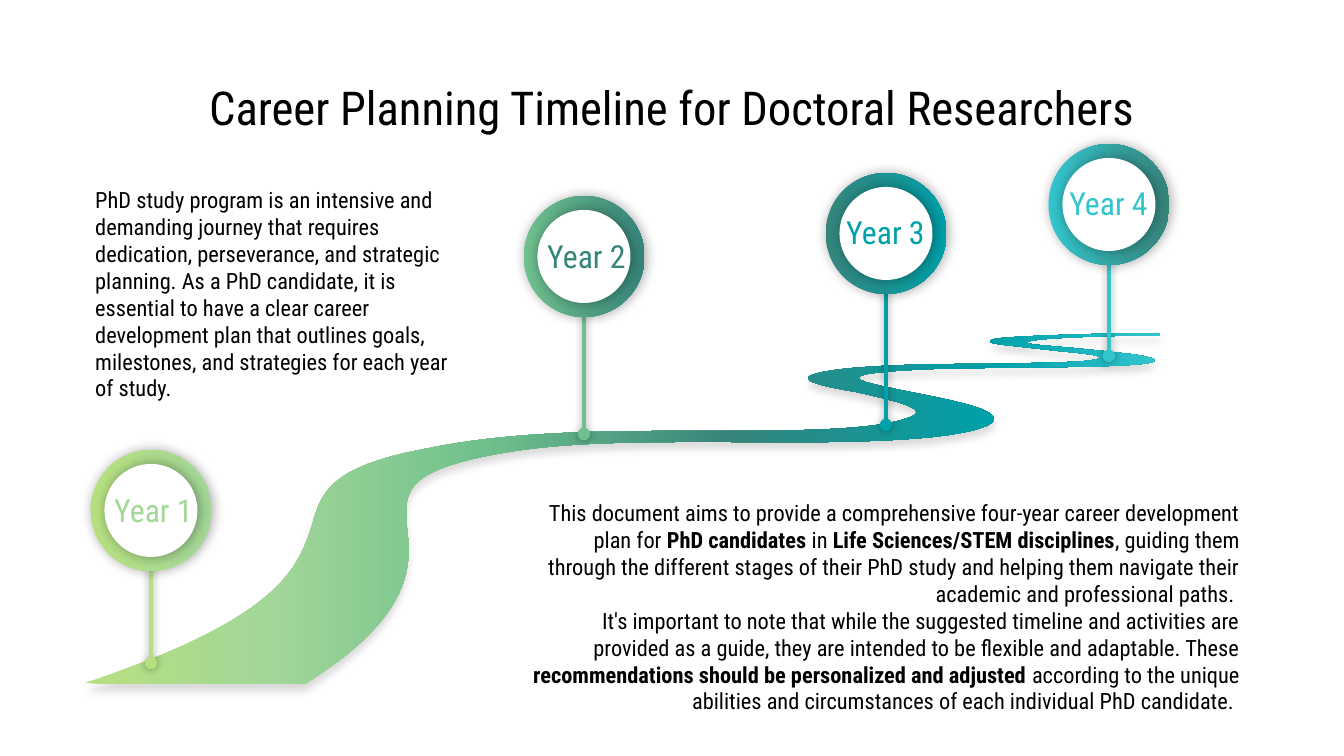
"""Build a slide with a winding four-year career road and its milestones."""
from copy import deepcopy
from pptx import Presentation
from pptx.dml.color import RGBColor
from pptx.enum.shapes import MSO_CONNECTOR as Line, MSO_SHAPE as Form
from pptx.enum.text import MSO_ANCHOR as Anchor, PP_ALIGN as Align
from pptx.oxml import parse_xml
from pptx.oxml.ns import nsdecls
from pptx.util import Pt

PX = 914400 / 134.4
FONT = "Roboto Condensed"
rgb = RGBColor.from_string


def shade(shape, alpha, blur, dist=0, angle=0):
    shape._element.spPr.append(parse_xml(
        f'<a:effectLst {nsdecls("a")}><a:outerShdw blurRad="{Pt(blur)}" dist="{Pt(dist)}" '
        f'dir="{angle * 60000}" algn="bl" rotWithShape="0"><a:srgbClr val="000000">'
        f'<a:alpha val="{alpha * 1000}"/></a:srgbClr></a:outerShdw></a:effectLst>'))


def blend(shape, stops):
    shape.fill.gradient()
    shape.fill.gradient_angle = 0
    group = shape._element.xpath(".//a:gsLst")[0]
    while len(group) < len(stops):
        group.append(deepcopy(group[0]))
    for stop, (place, tone) in zip(shape.fill.gradient_stops, stops):
        stop.position = place / 100
        stop.color.rgb = rgb(tone)
    shape.line.fill.background()


deck = Presentation()
deck.slide_width, deck.slide_height = round(1344 * PX), round(756 * PX)
slide = deck.slides.add_slide(deck.slide_layouts[6])
shapes = slide.shapes

start = (1031, 341)
bends = [
    (1038, 339, 1074, 337, 1117, 336), (1124, 336, 1141, 336, 1160, 336),
    (1160, 333),
    (1110, 333, 1008, 336, 995, 339), (978, 344, 1008, 345, 1040, 349),
    (1074, 353, 1110, 355, 1098, 359), (1085, 363, 1030, 363, 973, 364),
    (915, 364, 853, 366, 823, 372), (788, 379, 821, 386, 856, 392),
    (896, 401, 937, 410, 905, 419), (868, 431, 788, 431, 698, 431),
    (610, 431, 513, 431, 430, 448), (329, 466, 321, 493, 312, 526),
    (298, 567, 282, 618, 85, 683),
    (98, 684), (305, 684),
    (417, 614, 411, 562, 407, 527), (405, 495, 402, 474, 482, 457),
    (551, 442, 629, 442, 723, 442), (823, 443, 942, 443, 984, 427),
    (1019, 413, 956, 401, 910, 392), (872, 384, 843, 379, 868, 374),
    (895, 370, 942, 368, 1001, 368), (1062, 367, 1138, 367, 1153, 362),
    (1165, 356, 1111, 352, 1073, 348), (1039, 345, 1019, 344, 1031, 341),
]
pen = shapes.build_freeform(*start, scale=PX)
pen.add_line_segments([bend[-2:] for bend in bends])
road = pen.convert_to_shape()
west = min(bend[-2] for bend in bends)
north = min(bend[-1] for bend in bends)
for leg, bend in zip(road._element.xpath(".//a:lnTo"), bends):
    if len(bend) == 6:
        knots = "".join(f'<a:pt x="{x - west}" y="{y - north}"/>'
                        for x, y in zip(bend[::2], bend[1::2]))
        curve = parse_xml(f'<a:cubicBezTo {nsdecls("a")}>{knots}</a:cubicBezTo>')
        leg.getparent().replace(leg, curve)
blend(road, [(0, "B6E080"), (17, "A3D798"), (37, "70C08D"),
             (60, "36857B"), (84, "00A0A9"), (100, "33C5CE")])
shade(road, 15, 4.5, 3.8, 90)

black = "000000"
texts = [
    ((60, 64, 1223, 85), Align.CENTER, Anchor.MIDDLE, 25, black,
     [[("Career Planning Timeline for Doctoral Researchers", False)]]),
    ((82, 173, 382, 231), Align.LEFT, Anchor.TOP, 12, black,
     [[("PhD study program is an intensive and demanding journey that requires dedication, "
        "perseverance, and strategic planning. As a PhD candidate, it is essential to have a "
        "clear career development plan that outlines goals, milestones, and strategies for "
        "each year of study.", False)]]),
    ((509, 486, 744, 130), Align.RIGHT, Anchor.TOP, 12, black,
     [[("This document aims to provide a comprehensive four-year career development plan for ",
        False),
       ("PhD candidates ", True), ("in ", False), ("Life Sciences/STEM disciplines", True),
       (", guiding them through the different stages of their PhD study and helping them "
        "navigate their academic and professional paths. ", False)],
      [("It's important to note that while the suggested timeline and activities are provided "
        "as a guide, they are intended to be flexible and adaptable. These ", False),
       ("recommendations should be personalized and adjusted ", True),
       ("according to the unique abilities and circumstances of each individual PhD "
        "candidate. ", False)]]),
]

years = [
    (151, 450, 663, "B6E080", "A3D798", "B6E080", "A3D798", Align.LEFT),
    (584, 196, 434, "70C08D", "36857B", "70C08D", "36857B", Align.LEFT),
    (886, 173, 425, "36857B", "00A0A9", "00A0A9", "00A0A9", Align.RIGHT),
    (1109, 144, 356, "33C5CE", "36857B", "33C5CE", "33C5CE", Align.RIGHT),
]
for count, (mid, top, foot, left, right, stem, ink, side) in enumerate(years, 1):
    pin = shapes.add_connector(Line.STRAIGHT, *[
        round(n * PX) for n in (mid, top + 107, mid, foot)])
    pin.line.width = Pt(2.25)
    pin.line.color.rgb = rgb(stem)
    pin.line._get_or_add_ln().append(parse_xml(f'<a:tailEnd {nsdecls("a")} type="oval"/>'))
    shade(pin, 34, 4.5)
    for size, inset in ((121, 0), (93, 14)):
        disc = shapes.add_shape(Form.OVAL, *[
            round(n * PX) for n in (mid - size / 2, top + inset, size, size)])
        if inset:
            disc.fill.solid()
            disc.fill.fore_color.rgb = rgb("FFFFFF")
            disc.line.fill.background()
        else:
            blend(disc, [(0, left), (100, right)])
        shade(disc, 34, 6.8, 0.8)
    shift, drop = (50, 27) if side == Align.LEFT else (159, 26)
    texts.append(((mid - shift, top + drop, 211, 42), side, Anchor.TOP, 17, ink,
                  [[(f"Year {count}", False)]]))

for place, side, anchor, size, ink, paras in texts:
    frame = shapes.add_textbox(*[round(n * PX) for n in place]).text_frame
    frame.word_wrap = True
    frame.vertical_anchor = anchor
    frame.margin_left = frame.margin_right = Pt(7.2)
    frame.margin_top = frame.margin_bottom = Pt(7.2)
    for i, runs in enumerate(paras):
        para = frame.add_paragraph() if i else frame.paragraphs[0]
        para.alignment = side
        for words, bold in runs:
            run = para.add_run()
            run.text = words
            run.font.name = FONT
            run.font.size = Pt(size)
            run.font.bold = bold
            run.font.color.rgb = rgb(ink)

deck.save("out.pptx")
